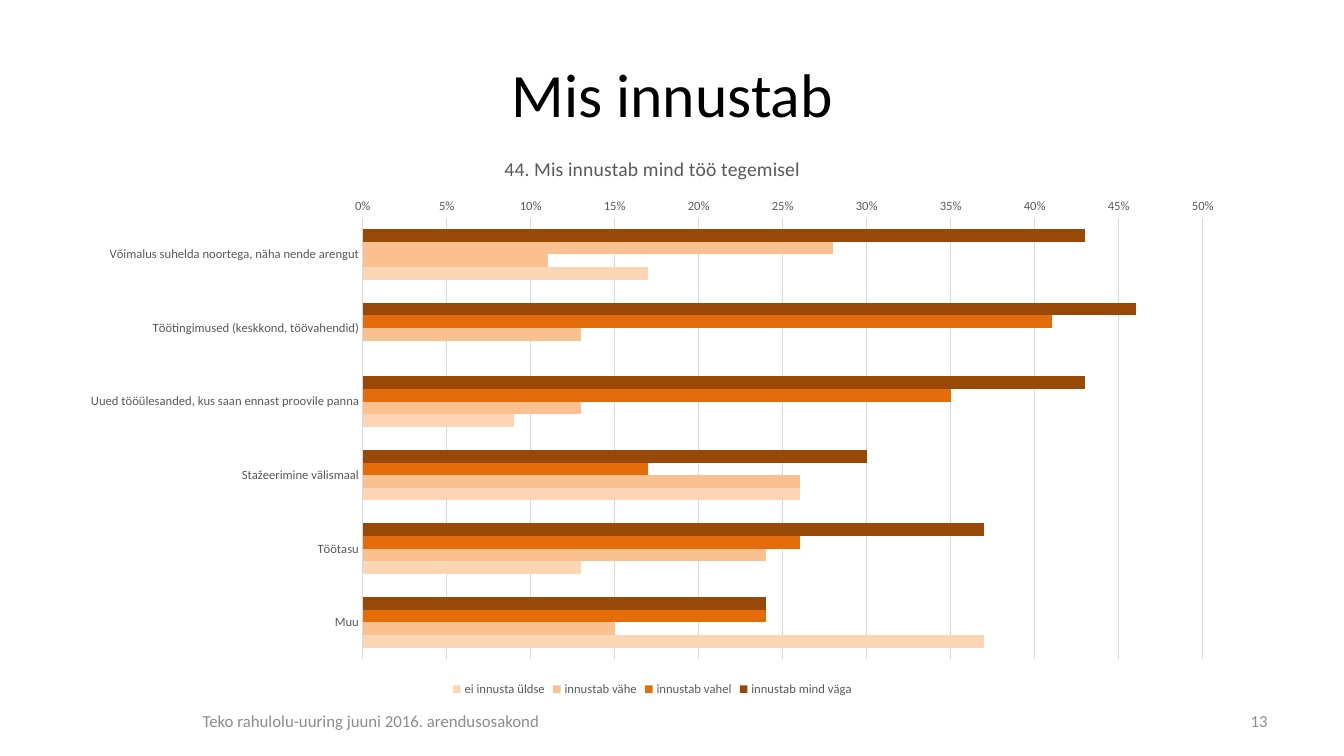
from pptx import Presentation
from pptx.chart.data import CategoryChartData
from pptx.dml.color import RGBColor
from pptx.enum.chart import XL_CHART_TYPE as ChartType, XL_LEGEND_POSITION as LegendPosition
from pptx.enum.chart import XL_TICK_MARK as TickMark
from pptx.enum.text import MSO_ANCHOR as Anchor, PP_ALIGN as Align
from pptx.util import Inches, Pt

FONT = "Calibri"
BLACK = RGBColor(0x00, 0x00, 0x00)
DARK_GRAY = RGBColor(0x59, 0x59, 0x59)
FOOTER_GRAY = RGBColor(0x8C, 0x8C, 0x8C)
GRID_GRAY = RGBColor(0xD9, 0xD9, 0xD9)
BROWN = RGBColor(0x98, 0x48, 0x07)
ORANGE = RGBColor(0xE4, 0x6C, 0x0A)
PEACH = RGBColor(0xFA, 0xC0, 0x90)
PALE_PEACH = RGBColor(0xFC, 0xD5, 0xB5)

TITLE = "Mis innustab"
CHART_TITLE = "44. Mis innustab mind töö tegemisel"
MOTIVATORS = [
    "Võimalus suhelda noortega, näha nende arengut",
    "Töötingimused (keskkond, töövahendid)",
    "Uued tööülesanded, kus saan ennast proovile panna",
    "Stažeerimine välismaal",
    "Töötasu",
    "Muu",
]
ANSWERS = [
    ("innustab mind väga", BROWN, (0.43, 0.46, 0.43, 0.30, 0.37, 0.24)),
    ("innustab vahel", ORANGE, (0.28, 0.41, 0.35, 0.17, 0.26, 0.24)),
    ("innustab vähe", PEACH, (0.11, 0.13, 0.13, 0.26, 0.24, 0.15)),
    ("ei innusta üldse", PALE_PEACH, (0.17, 0, 0.09, 0.26, 0.13, 0.37)),
]
FOOTERS = [
    ("Teko rahulolu-uuring juuni 2016. arendusosakond", 0.67, 6.02, Align.CENTER),
    ("13", 9.56, 3.11, Align.RIGHT),
]


def style_font(font, size, color):
    """Set typeface, size and colour of a font."""
    font.name = FONT
    font.size = Pt(size)
    font.bold = False
    font.color.rgb = color


def add_title(page):
    """Place and format the slide title."""
    title = page.shapes.title
    title.left, title.top = Inches(0.67), Inches(0.3)
    title.width, title.height = Inches(12), Inches(1.25)
    title.text_frame.text = TITLE
    title.text_frame.vertical_anchor = Anchor.MIDDLE
    para = title.text_frame.paragraphs[0]
    para.alignment = Align.CENTER
    style_font(para.runs[0].font, 44, BLACK)


def add_motivation_chart(page):
    """Add the clustered bar chart of answers."""
    data = CategoryChartData(number_format="0%")
    data.categories = MOTIVATORS
    for name, _, values in ANSWERS:
        data.add_series(name, values)
    chart = page.shapes.add_chart(
        ChartType.BAR_CLUSTERED, Inches(0.67), Inches(1.34),
        Inches(11.6), Inches(5.61), data).chart
    style_font(chart.font, 10, BLACK)

    chart.has_title = True
    chart.chart_title.text_frame.text = CHART_TITLE
    chart.chart_title.include_in_layout = False
    style_font(chart.chart_title.text_frame.paragraphs[0].runs[0].font, 14, DARK_GRAY)

    chart.has_legend = True
    chart.legend.position = LegendPosition.BOTTOM
    chart.legend.include_in_layout = False
    style_font(chart.legend.font, 9, DARK_GRAY)

    for axis in (chart.category_axis, chart.value_axis):
        axis.major_tick_mark = axis.minor_tick_mark = TickMark.NONE
        style_font(axis.tick_labels.font, 9, DARK_GRAY)
    chart.category_axis.reverse_order = True
    chart.value_axis.minimum_scale = 0
    chart.value_axis.maximum_scale = 0.5
    chart.value_axis.major_unit = 0.05
    chart.value_axis.tick_labels.number_format = "0%"
    chart.value_axis.tick_labels.number_format_is_linked = False
    chart.value_axis.format.line.fill.background()
    for line in (chart.category_axis.format.line,
                 chart.value_axis.major_gridlines.format.line):
        line.color.rgb = GRID_GRAY
        line.width = Pt(0.75)

    plot = chart.plots[0]
    plot.gap_width = 182
    plot.vary_by_categories = False
    for series, (_, color, _) in zip(plot.series, ANSWERS):
        series.format.fill.solid()
        series.format.fill.fore_color.rgb = color
    first_bar = plot.series[1].points[0].format.fill
    first_bar.solid()
    first_bar.fore_color.rgb = PEACH


def add_footer(page, text, left, width, alignment):
    """Add one text box to the footer row."""
    box = page.shapes.add_textbox(Inches(left), Inches(6.95), Inches(width), Inches(0.4))
    box.text_frame.word_wrap = True
    box.text_frame.vertical_anchor = Anchor.MIDDLE
    box.text_frame.text = text
    para = box.text_frame.paragraphs[0]
    para.alignment = alignment
    style_font(para.runs[0].font, 12, FOOTER_GRAY)


def main():
    """Build and save the slide."""
    deck = Presentation()
    deck.slide_width, deck.slide_height = Inches(13.33), Inches(7.5)
    page = deck.slides.add_slide(deck.slide_layouts[5])
    add_title(page)
    add_motivation_chart(page)
    for footer in FOOTERS:
        add_footer(page, *footer)
    deck.save("out.pptx")


if __name__ == "__main__":
    main()
